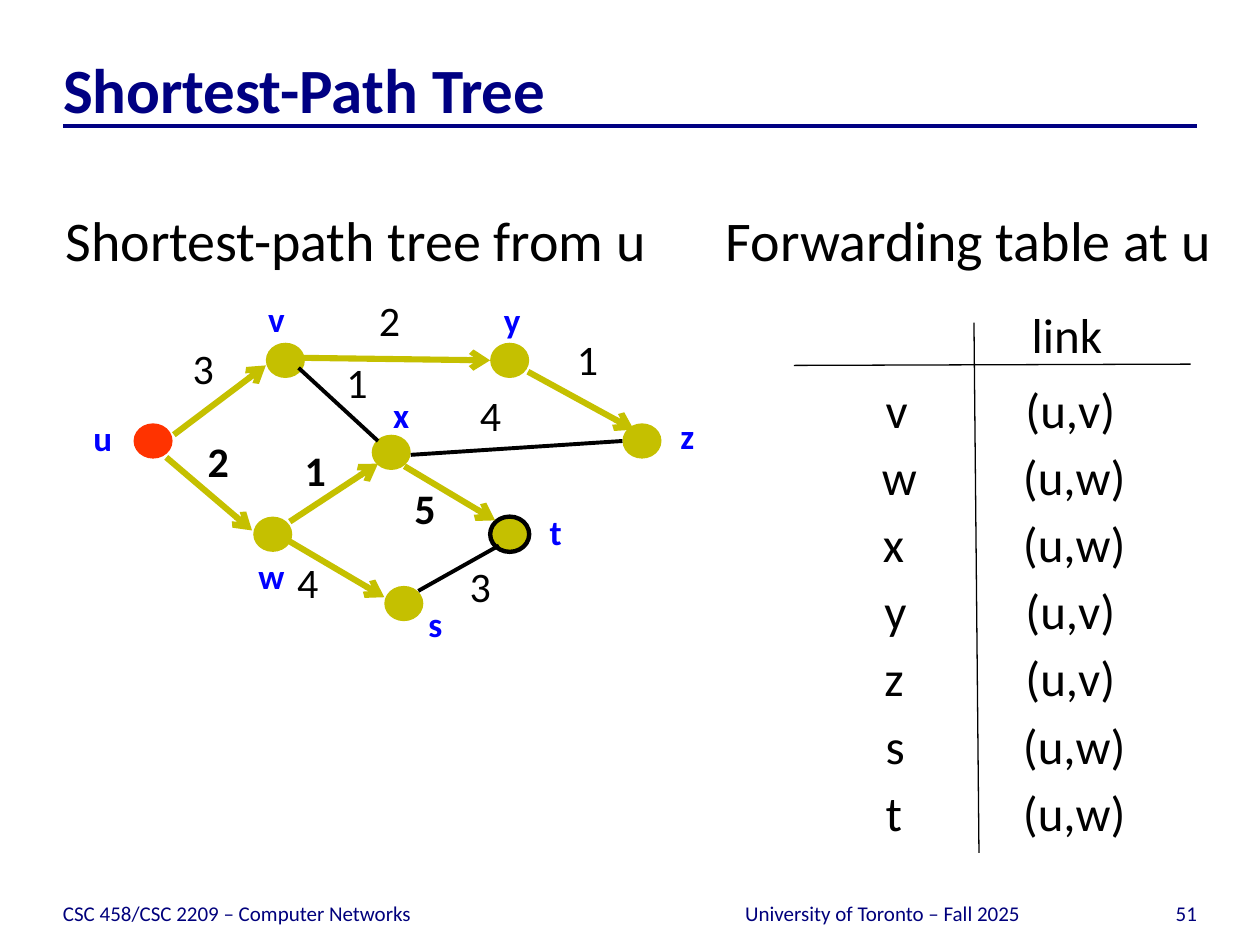
from lxml import etree
from pptx import Presentation
from pptx import util as u
from pptx.dml.color import RGBColor
from pptx.enum import shapes, text
from pptx.oxml.ns import qn

NAVY = RGBColor(0x00, 0x00, 0x82)
FOOT = RGBColor(0x00, 0x00, 0x7C)
BLUE = RGBColor(0x00, 0x00, 0xFF)
BLACK = RGBColor(0x00, 0x00, 0x00)
RED = RGBColor(0xFF, 0x33, 0x00)
OLIVE = RGBColor(0xC5, 0xC0, 0x00)
LEFT, MID, RIGHT = text.PP_ALIGN.LEFT, text.PP_ALIGN.CENTER, text.PP_ALIGN.RIGHT


class Pen:
    """Draws on one slide in one style."""

    def __init__(self, slide, face="Calibri"):
        self.slide = slide
        self.face = face

    def put(self, frame, words, size, color=BLACK, bold=False, align=LEFT):
        frame.text = words
        par = frame.paragraphs[0]
        par.alignment = align
        font = par.font
        font.name, font.size, font.bold = self.face, u.Pt(size), bold
        font.color.rgb = color

    def inset(self, frame, top=0):
        frame.margin_left = frame.margin_right = frame.margin_bottom = 0
        frame.margin_top = u.Inches(top)
        frame.vertical_anchor = text.MSO_ANCHOR.BOTTOM

    def place(self, holder, x, y, w, h):
        holder.left, holder.top = u.Inches(x), u.Inches(y)
        holder.width, holder.height = u.Inches(w), u.Inches(h)
        holder.text_frame.auto_size = text.MSO_AUTO_SIZE.NONE
        return holder.text_frame

    def title(self, words, *box):
        frame = self.place(self.slide.shapes.title, *box)
        self.inset(frame, 0.05)
        self.put(frame, words, 36, NAVY, True)

    def body(self, index, words, *box):
        holder = self.slide.placeholders[index]
        self.put(self.place(holder, *box), words, 32)
        # No bullet and no indent
        props = holder.element.find(".//" + qn("a:pPr"))
        props.set("marL", "0")
        props.set("indent", "0")
        props.insert(0, etree.Element(qn("a:buNone")))

    def label(self, words, x, y, w, h, size, **style):
        frame = self.slide.shapes.add_textbox(
            u.Inches(x), u.Inches(y), u.Inches(w), u.Inches(h)).text_frame
        frame.word_wrap = False
        frame.auto_size = text.MSO_AUTO_SIZE.SHAPE_TO_FIT_TEXT
        self.put(frame, words, size, **style)

    def foot(self, words, x, w, align):
        frame = self.slide.shapes.add_textbox(
            u.Inches(x), u.Inches(6.95), u.Inches(w), u.Inches(0.4)).text_frame
        frame.word_wrap = True
        self.inset(frame)
        self.put(frame, words, 12, FOOT, align=align)

    def node(self, x, y, color, ring=False):
        dot = self.slide.shapes.add_shape(
            shapes.MSO_SHAPE.OVAL, u.Inches(x), u.Inches(y), u.Inches(0.31), u.Inches(0.28))
        dot.shadow.inherit = False
        dot.fill.solid()
        dot.fill.fore_color.rgb = color
        if ring:
            dot.line.color.rgb = BLACK
            dot.line.width = u.Pt(2.5)
        else:
            dot.line.fill.background()

    def line(self, x1, y1, x2, y2, color, width, arrow=False):
        link = self.slide.shapes.add_connector(
            shapes.MSO_CONNECTOR.STRAIGHT,
            u.Inches(x1), u.Inches(y1), u.Inches(x2), u.Inches(y2))
        link.line.color.rgb = color
        link.line.width = u.Pt(width)
        props = link.element.spPr
        if arrow:
            etree.SubElement(props.find(qn("a:ln")), qn("a:tailEnd"), type="arrow")
        etree.SubElement(props, qn("a:effectLst"))


# Node name: dot left, dot top, label left, label top, label width
NODES = {
    "u": (1.06, 3.36, 0.64, 3.26, 0.35),
    "w": (2.01, 4.10, 1.95, 4.35, 0.41),
    "v": (2.11, 2.72, 2.03, 2.31, 0.33),
    "x": (2.95, 3.45, 3.02, 3.07, 0.33),
    "t": (3.89, 4.10, 4.26, 4.00, 0.30),
    "y": (3.89, 2.72, 3.90, 2.32, 0.33),
    "s": (3.05, 4.65, 3.30, 4.73, 0.31),
    "z": (4.94, 3.36, 5.30, 3.24, 0.31),
}
# Edges in the tree, and the other edges
TREE = [
    (1.38, 3.45, 2.11, 2.90), (1.32, 3.63, 2.00, 4.21),
    (2.27, 4.28, 3.05, 4.74), (2.30, 4.14, 3.00, 3.68),
    (3.21, 3.70, 3.93, 4.13), (2.39, 2.84, 3.89, 2.86),
    (4.19, 2.95, 5.03, 3.41),
]
REST = [
    (2.37, 2.92, 3.00, 3.50), (3.32, 4.69, 3.96, 4.33),
    (3.26, 3.61, 4.94, 3.50),
]
# Edge cost, left, top, bold
COSTS = [
    ("3", 1.43, 2.67, False), ("2", 2.91, 2.29, False), ("2", 1.55, 3.41, True),
    ("1", 2.65, 2.78, False), ("1", 2.32, 3.48, True), ("4", 3.71, 3.04, False),
    ("1", 4.48, 2.60, False), ("4", 2.26, 4.37, False), ("5", 3.19, 3.78, True),
    ("3", 3.63, 4.40, False),
]
# Target, its left and width, and the first hop
ROWS = [
    ("v", 6.93, 0.38, "v"), ("w", 6.90, 0.48, "w"), ("x", 6.91, 0.37, "w"),
    ("y", 6.92, 0.38, "v"), ("z", 6.92, 0.35, "v"), ("s", 6.93, 0.35, "w"),
    ("t", 6.93, 0.33, "w"),
]
HOPS = {"v": (8.04, 0.91), "w": (8.02, 1.02)}


def main():
    deck = Presentation()
    deck.slide_width, deck.slide_height = u.Inches(10), u.Inches(7.5)
    pen = Pen(deck.slides.add_slide(deck.slide_layouts[3]))

    # Rule, footer and headings
    pen.line(0.5, 1, 9.5, 1, NAVY, 2.25)
    pen.foot("CSC 458/CSC 2209 – Computer Networks", 0.5, 4.83, LEFT)
    pen.foot("51", 8.67, 0.83, RIGHT)
    pen.foot("University of Toronto – Fall 2025", 5.42, 3.17, MID)
    pen.title("Shortest-Path Tree", 0.5, 0.33, 9, 0.67)
    pen.body(1, "Shortest-path tree from u", 0.42, 1.58, 4.95, 5.25)
    pen.body(2, "Forwarding table at u", 5.66, 1.58, 4.34, 5.25)

    # Graph
    for name, (x, y, *_) in NODES.items():
        pen.node(x, y, RED if name == "u" else OLIVE, ring=name == "t")
    for ends in TREE:
        pen.line(*ends, OLIVE, 3.5, arrow=True)
    for ends in REST:
        pen.line(*ends, BLACK, 2.25)
    for cost, x, y, bold in COSTS:
        pen.label(cost, x, y, 0.37, 0.5, 24, bold=bold)
    for name, (*_, x, y, w) in NODES.items():
        pen.label(name, x, y, w, 0.43, 20, color=BLUE, bold=True, align=MID)

    # Forwarding table, ruled by two slightly slanted lines
    pen.line(7.73, 2.56, 7.77, 6.77, BLACK, 0.75)
    pen.line(6.3, 2.9, 9.45, 2.89, BLACK, 0.75)
    pen.label("link", 8.09, 2.37, 0.76, 0.57, 28)
    for i, (name, x, w, hop) in enumerate(ROWS):
        y = 2.96 + i * 3.2 / 6
        left, wide = HOPS[hop]
        pen.label(name, x, y, w, 0.57, 28)
        pen.label(f"(u,{hop})", left, y, wide, 0.57, 28)

    deck.save("out.pptx")


if __name__ == "__main__":
    main()
